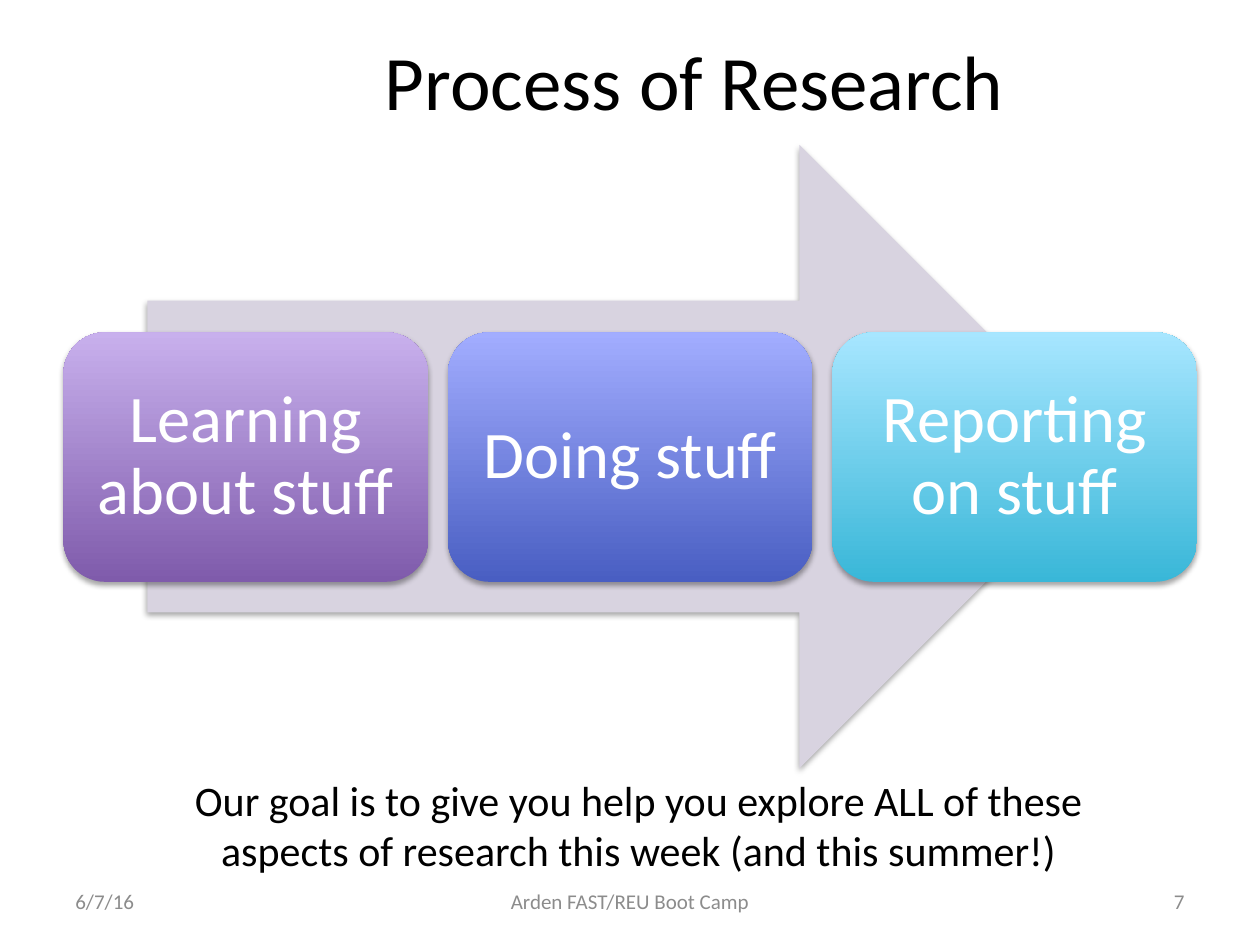
"""Build a slide showing the three steps of the research process."""
from lxml import etree
from pptx import Presentation
from pptx.dml.color import RGBColor
from pptx.enum.shapes import MSO_SHAPE
from pptx.enum.text import MSO_ANCHOR, PP_ALIGN
from pptx.oxml.ns import qn
from pptx.util import Cm, Pt

ARROW, ROUNDED = MSO_SHAPE.RIGHT_ARROW, MSO_SHAPE.ROUNDED_RECTANGLE
TOP, MIDDLE = MSO_ANCHOR.TOP, MSO_ANCHOR.MIDDLE
LEFT, CENTER, RIGHT = PP_ALIGN.LEFT, PP_ALIGN.CENTER, PP_ALIGN.RIGHT
color = RGBColor.from_string


def write(shape, text, size, hex_color, align, anchor):
    frame = shape.text_frame
    frame.word_wrap = True
    frame.vertical_anchor = anchor
    para = frame.paragraphs[0]
    para.text = text
    para.alignment = align
    para.font.name = "Calibri"
    para.font.size = Pt(size)
    para.font.color.rgb = color(hex_color)


def add_shadow(shape):
    shape.shadow.inherit = False
    effects = shape._element.spPr.find(qn("a:effectLst"))
    shadow = etree.SubElement(effects, qn("a:outerShdw"), blurRad="40000",
                              dist="23000", dir="5400000", rotWithShape="0")
    black = etree.SubElement(shadow, qn("a:srgbClr"), val="000000")
    etree.SubElement(black, qn("a:alpha"), val="35000")


deck = Presentation()
deck.slide_width, deck.slide_height = Cm(25.4), Cm(19.05)
slide = deck.slides.add_slide(deck.slide_layouts[6])
shapes = slide.shapes

arrow = shapes.add_shape(ARROW, Cm(2.97), Cm(2.92), Cm(19.43), Cm(12.57))
arrow.fill.solid()
arrow.fill.fore_color.rgb = color("D8D3E0")
arrow.line.fill.background()
add_shadow(arrow)

steps = [
    ("Learning about stuff", "7F5BAB", "C8B0ED"),
    ("Doing stuff", "495EC2", "A2ADFF"),
    ("Reporting on stuff", "39B7D8", "A7E6FF"),
]
for index, (label, bottom_color, top_color) in enumerate(steps):
    step = shapes.add_shape(ROUNDED, Cm(1.28 + 7.75 * index), Cm(6.7), Cm(7.35), Cm(5.03))
    step.fill.gradient()
    step.fill.gradient_angle = 90
    for stop, stop_color in zip(step.fill.gradient_stops, (bottom_color, top_color)):
        stop.color.rgb = color(stop_color)
    step.line.fill.background()
    add_shadow(step)
    write(step, label, 38, "FFFFFF", CENTER, MIDDLE)
    frame = step.text_frame
    frame.margin_left = frame.margin_right = Cm(0.4)
    frame.margin_top = frame.margin_bottom = Cm(0.4)
    frame.paragraphs[0].line_spacing = 0.9

goal = ("Our goal is to give you help you explore ALL of these "
        "aspects of research this week (and this summer!)")
texts = [
    ("Process of Research", 6.73, 0.41, 14.55, 2.41, 44, "000000", CENTER, MIDDLE),
    ("6/7/16", 1.27, 17.65, 5.92, 1.02, 12, "8C8C8C", LEFT, MIDDLE),
    ("Arden FAST/REU Boot Camp", 8.68, 17.65, 8.04, 1.02, 12, "8C8C8C", CENTER, MIDDLE),
    ("7", 18.21, 17.65, 5.92, 1.02, 12, "8C8C8C", RIGHT, MIDDLE),
    (goal, 2.92, 15.49, 19.91, 2.31, 24, "000000", CENTER, TOP),
]
for text, left, top, width, height, size, hex_color, align, anchor in texts:
    box = shapes.add_textbox(Cm(left), Cm(top), Cm(width), Cm(height))
    write(box, text, size, hex_color, align, anchor)

deck.save("out.pptx")
